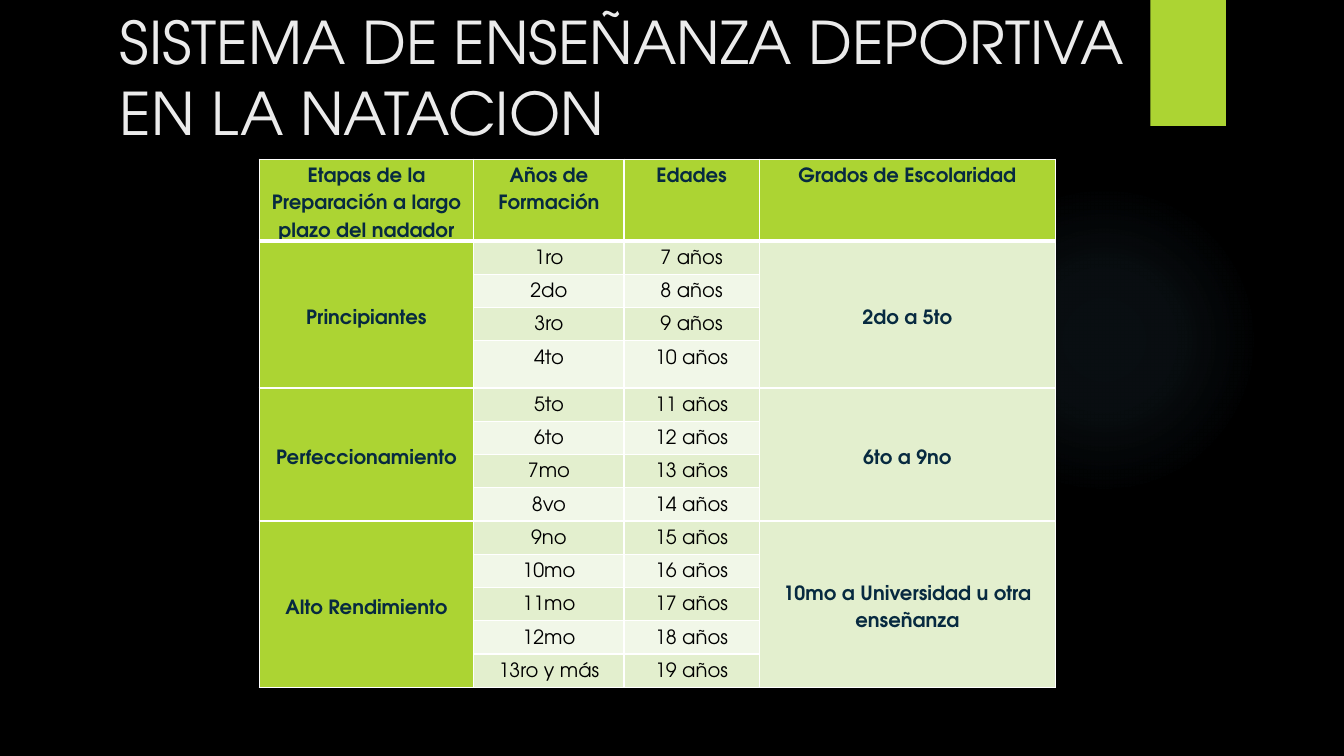
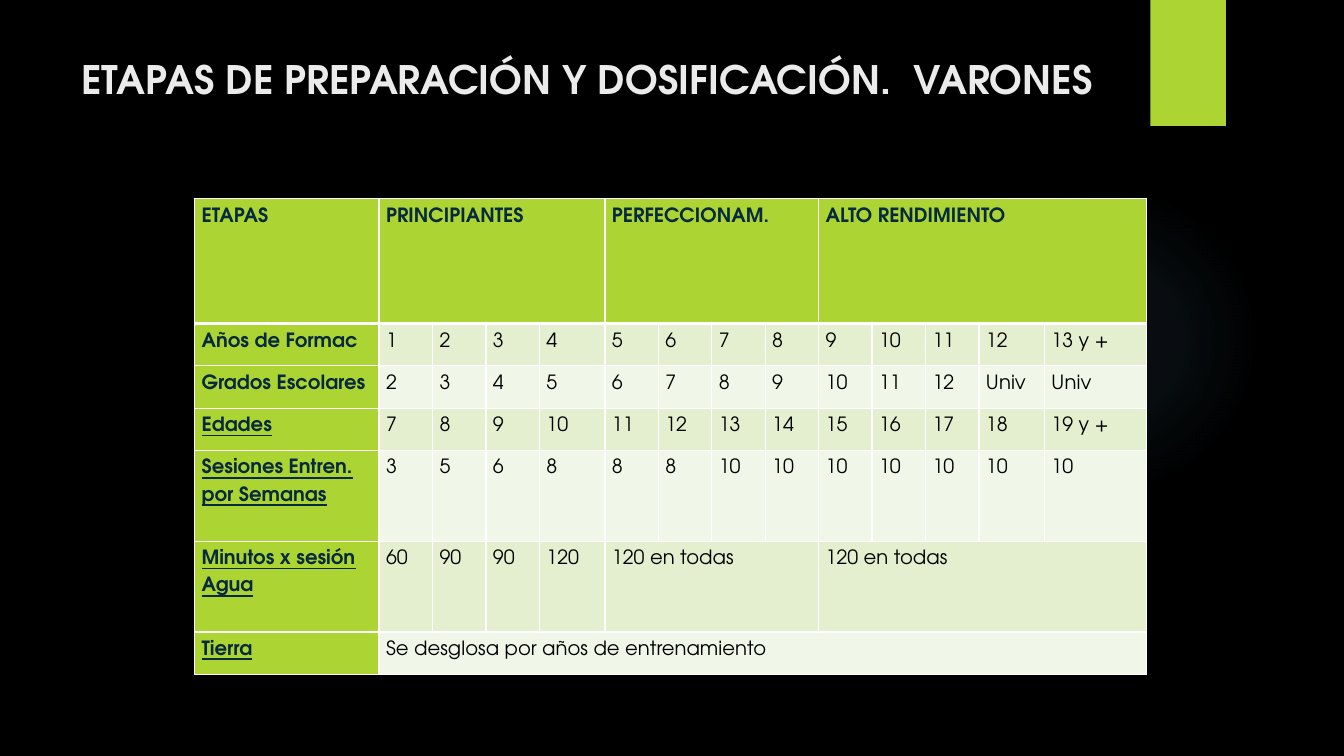
"""Build two dark slides with tables on the stages of swimming training."""
from dataclasses import dataclass

from lxml import etree
from pptx import Presentation
from pptx import util as u
from pptx.dml.color import RGBColor
from pptx.enum import shapes, text
from pptx.oxml import parse_xml
from pptx.oxml.ns import nsdecls, qn


@dataclass(frozen=True)
class Theme:
    font: str = "TeX Gyre Adventor"
    background: str = "000000"
    lime: str = "ACD433"
    title: str = "EBEBEB"
    heading: str = "072A40"
    body: str = "000000"
    band_odd: str = "E3EFCE"
    band_even: str = "F1F7E8"
    border: str = "FFFFFF"
    glow: str = "7AC4F0"
    cell_size: int = 14


theme = Theme()


def style_font(font, size, color, bold=False):
    font.name, font.size, font.bold = theme.font, u.Pt(size), bold
    font.color.rgb = RGBColor.from_string(color)


def set_borders(cell, top, bottom):
    widths = {"lnL": 1, "lnR": 1, "lnT": top, "lnB": bottom}
    properties = cell._tc.get_or_add_tcPr()
    for position, (side, width) in enumerate(widths.items()):
        line = etree.Element(qn(f"a:{side}"), w=str(u.Pt(width)))
        fill = etree.SubElement(line, qn("a:solidFill"))
        etree.SubElement(fill, qn("a:srgbClr"), val=theme.border)
        properties.insert(position, line)


stage_rows = [["Etapas de la Preparación a largo plazo del nadador", "Años de Formación",
               "Edades", "Grados de Escolaridad"]]
years = ["1ro", "2do", "3ro", "4to", "5to", "6to", "7mo", "8vo", "9no", "10mo",
         "11mo", "12mo", "13ro y más"]
stages = {0: ("Principiantes", "2do a 5to"),
          4: ("Perfeccionamiento", "6to a 9no"),
          8: ("Alto Rendimiento", "10mo a Universidad u otra enseñanza")}
for index, year in enumerate(years):
    stage, grades = stages.get(index, ("", ""))
    stage_rows.append([stage, year, f"{index + 7} años", grades])

dosage_rows = [
    ["ETAPAS", "PRINCIPIANTES", "", "", "", "PERFECCIONAM.", "", "", "", "ALTO RENDIMIENTO"],
    ["Años de Formac", *range(1, 13), "13 y +"],
    ["Grados Escolares", *range(2, 13), "Univ", "Univ"],
    ["Edades", *range(7, 19), "19 y +"],
    ["Sesiones Entren. por Semanas", 3, 5, 6, 8, 8, 8] + [10] * 7,
    ["Minutos x sesión\nAgua", 60, 90, 90, 120, "120 en todas", "", "", "", "120 en todas"],
    ["Tierra", "Se desglosa por años de entrenamiento"],
]

pages = [
    dict(title="SISTEMA DE ENSEÑANZA DEPORTIVA EN LA NATACION",
         title_at=(1.09, 0.01), title_size=42, title_bold=False,
         table_at=(2.57, 1.58), rows=stage_rows,
         widths=[2.13, 1.49, 1.34, 2.94],
         heights=[0.65] + [0.33] * 3 + [0.47] + [0.33] * 9,
         spans=[(row, column, count, 1) for row, count in ((1, 4), (5, 4), (9, 5))
                for column in (0, 3)],
         align=text.PP_ALIGN.CENTER, underlined=()),
    dict(title="ETAPAS DE PREPARACIÓN Y DOSIFICACIÓN.  VARONES",
         title_at=(0.71, 0.5), title_size=28, title_bold=True,
         table_at=(1.93, 1.97), rows=dosage_rows,
         widths=[1.83] + [0.53] * 3 + [0.65] + [0.53] * 7 + [0.65, 1.01],
         heights=[1.24] + [0.42] * 3 + [0.9] * 2 + [0.42],
         spans=[(0, 1, 1, 4), (0, 5, 1, 4), (0, 9, 1, 5),
                (5, 5, 1, 4), (5, 9, 1, 5), (6, 1, 1, 13)],
         align=text.PP_ALIGN.LEFT, underlined=(3, 4, 5, 6)),
]

presentation = Presentation()
presentation.slide_width, presentation.slide_height = u.Inches(13.33), u.Inches(7.5)
layout = presentation.slide_layouts.get_by_name("Title Only")
slides = [presentation.slides.add_slide(layout) for page in pages]

master = presentation.slide_master
master.background.fill.solid()
master.background.fill.fore_color.rgb = RGBColor.from_string(theme.background)

decorations = [(shapes.MSO_SHAPE.OVAL, 9.41, 1.83, 3.08, 3.08),
               (shapes.MSO_SHAPE.RECTANGLE, 11.41, 0, 0.75, 1.25)]
glow, band = [slides[0].shapes.add_shape(kind, *map(u.Inches, box))
              for kind, *box in decorations]
for position, shape in enumerate((glow, band), start=2):
    shape.shadow.inherit = False
    shape.line.fill.background()
    shape.fill.solid()
    shape.fill.fore_color.rgb = RGBColor.from_string(theme.lime)
    master.shapes.element.insert(position, shape.element)

stops = "".join(
    f'<a:gs pos="{place * 1000}"><a:srgbClr val="{theme.glow}">'
    f'<a:alpha val="{alpha * 1000}"/></a:srgbClr></a:gs>'
    for place, alpha in ((0, 7), (36, 6), (69, 0)))
gradient = parse_xml(
    f'<a:gradFill {nsdecls("a")}><a:gsLst>{stops}</a:gsLst><a:path path="circle">'
    '<a:fillToRect l="50000" t="50000" r="50000" b="50000"/></a:path></a:gradFill>')
glow_properties = glow.element.spPr
glow_properties.replace(glow_properties.find(qn("a:solidFill")), gradient)

band.element.spPr.find(qn("a:effectLst")).append(parse_xml(
    f'<a:outerShdw {nsdecls("a")} blurRad="{u.Pt(3)}" dist="{u.Pt(2)}" dir="5400000">'
    '<a:srgbClr val="000000"><a:alpha val="45000"/></a:srgbClr></a:outerShdw>'))

for slide, page in zip(slides, pages):
    title = slide.shapes.title
    title.left, title.top = map(u.Inches, page["title_at"])
    title.width, title.height = u.Inches(10.29), u.Inches(1.53)
    frame = title.text_frame
    frame.text = page["title"]
    frame.word_wrap = True
    frame.auto_size = text.MSO_AUTO_SIZE.NONE
    frame.vertical_anchor = text.MSO_ANCHOR.TOP
    frame.paragraphs[0].alignment = text.PP_ALIGN.LEFT
    style_font(frame.paragraphs[0].font, page["title_size"], theme.title, page["title_bold"])

    widths, heights = page["widths"], page["heights"]
    table = slide.shapes.add_table(
        len(heights), len(widths), *map(u.Inches, page["table_at"]),
        u.Inches(sum(widths)), u.Inches(sum(heights))).table
    table.horz_banding = False
    for column, width in zip(table.columns, widths):
        column.width = u.Inches(width)
    for row, height in zip(table.rows, heights):
        row.height = u.Inches(height)
    for row, column, tall, wide in page["spans"]:
        table.cell(row, column).merge(table.cell(row + tall - 1, column + wide - 1))

    for row in range(len(heights)):
        values = page["rows"][row]
        for column in range(len(widths)):
            cell = table.cell(row, column)
            cell.text = str(values[column]) if column < len(values) else ""
            cell.margin_left = cell.margin_right = u.Inches(0.07)
            cell.margin_top = cell.margin_bottom = 0
            is_header = row == 0 or column == 0
            is_tall = cell.is_merge_origin and cell.span_height > 1
            cell.vertical_anchor = text.MSO_ANCHOR.MIDDLE if is_tall else text.MSO_ANCHOR.TOP
            band_color = theme.band_odd if row % 2 else theme.band_even
            cell.fill.solid()
            cell.fill.fore_color.rgb = RGBColor.from_string(
                theme.lime if is_header else band_color)
            set_borders(cell, top=3 if row == 1 else 1, bottom=3 if row == 0 else 1)
            strong = is_header or is_tall
            for paragraph in cell.text_frame.paragraphs:
                paragraph.alignment = page["align"]
                paragraph.line_spacing = 1.5
                style_font(paragraph.font, theme.cell_size,
                           theme.heading if strong else theme.body, strong)
                paragraph.font.underline = column == 0 and row in page["underlined"]

presentation.save("out.pptx")
